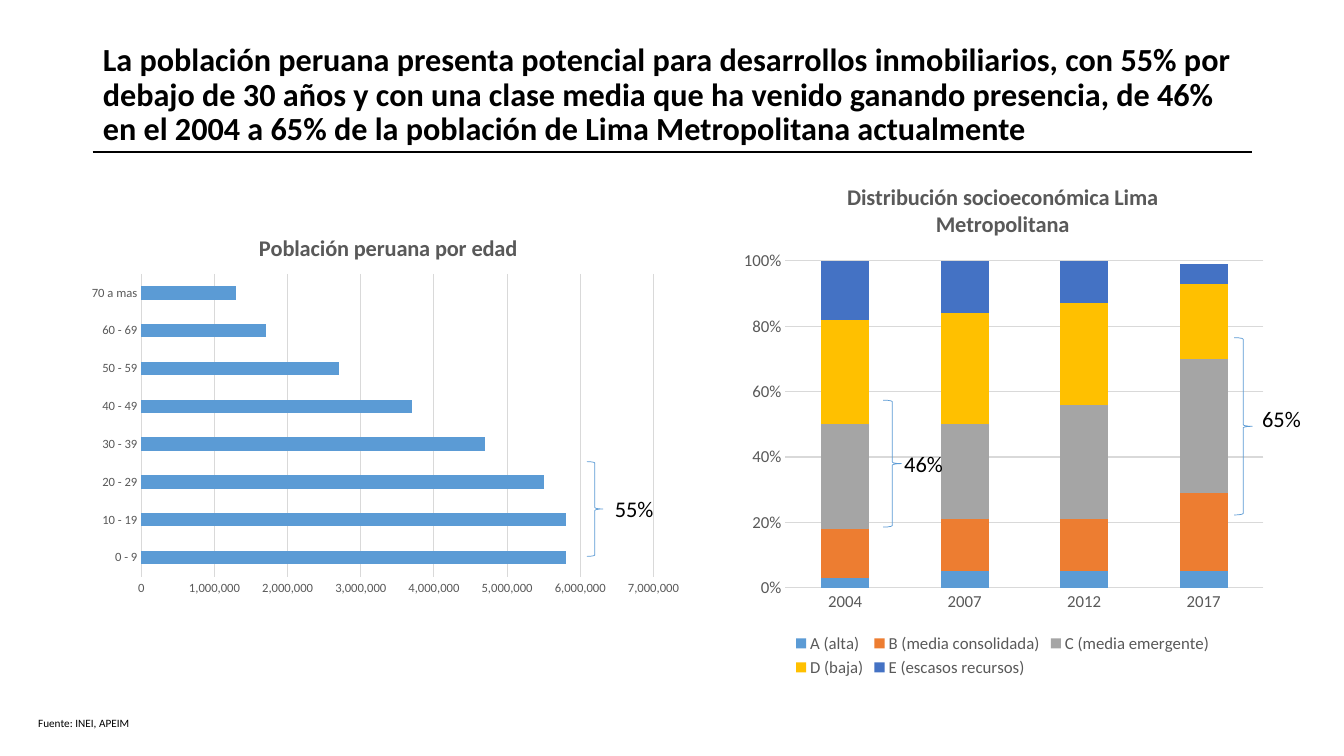
"""Build the slide on Peru's population by age and Lima's socioeconomic mix."""
import pptx
import pptx.chart.data
import pptx.dml.color
import pptx.enum.chart
import pptx.enum.shapes
import pptx.enum.text
import pptx.oxml
import pptx.oxml.ns
import pptx.util

Inches = pptx.util.Inches
Pt = pptx.util.Pt
RGBColor = pptx.dml.color.RGBColor
ChartType = pptx.enum.chart.XL_CHART_TYPE
TickMark = pptx.enum.chart.XL_TICK_MARK

BLACK = RGBColor(0x00, 0x00, 0x00)
GRAY_TEXT = RGBColor(0x59, 0x59, 0x59)
GRID = RGBColor(0xD9, 0xD9, 0xD9)
BLUE = RGBColor(0x5B, 0x9B, 0xD5)
ORANGE = RGBColor(0xED, 0x7D, 0x31)
GRAY = RGBColor(0xA5, 0xA5, 0xA5)
GOLD = RGBColor(0xFF, 0xC0, 0x00)
DARK_BLUE = RGBColor(0x44, 0x72, 0xC4)
FONT = "Calibri"


def style_font(font, size, color, bold=False):
    font.name = FONT
    font.size = Pt(size)
    font.color.rgb = color
    font.bold = bold


def add_label(page, text, left, top, width, height, size):
    box = page.shapes.add_textbox(Inches(left), Inches(top), Inches(width), Inches(height))
    box.text_frame.word_wrap = True
    box.text_frame.auto_size = pptx.enum.text.MSO_AUTO_SIZE.SHAPE_TO_FIT_TEXT
    para = box.text_frame.paragraphs[0]
    para.text = text
    style_font(para.font, size, BLACK)


deck = pptx.Presentation()
deck.slide_width = Inches(13.33)
deck.slide_height = Inches(7.5)
page = deck.slides.add_slide(deck.slide_layouts[5])

title = page.shapes.title
title.left, title.top = Inches(0.92), Inches(0.4)
title.width, title.height = Inches(11.5), Inches(1.1)
title.text_frame.word_wrap = True
title.text_frame.auto_size = pptx.enum.text.MSO_AUTO_SIZE.NONE
title.text_frame.vertical_anchor = pptx.enum.text.MSO_ANCHOR.MIDDLE
para = title.text_frame.paragraphs[0]
para.text = (
    "La población peruana presenta potencial para desarrollos inmobiliarios, con 55% por "
    "debajo de 30 años y con una clase media que ha venido ganando presencia, de 46% "
    "en el 2004 a 65% de la población de Lima Metropolitana actualmente"
)
para.alignment = pptx.enum.text.PP_ALIGN.LEFT
para.line_spacing = 0.9
style_font(para.font, 23, BLACK, True)

rule = page.shapes.add_connector(
    pptx.enum.shapes.MSO_CONNECTOR.STRAIGHT,
    Inches(0.92), Inches(1.51), Inches(12.42), Inches(1.51),
)
rule.line.color.rgb = BLACK
rule.line.width = Pt(1.5)
rule.element.spPr.append(pptx.oxml.parse_xml(f"<a:effectLst {pptx.oxml.ns.nsdecls('a')}/>"))

charts = [
    {
        "title": "Población peruana por edad",
        "type": ChartType.BAR_CLUSTERED,
        "at": (0.79, 2.14, 6.12, 3.85),
        "plot": (0.1, 0.15, 0.83, 0.78),
        "categories": ["0 - 9", "10 - 19", "20 - 29", "30 - 39",
                       "40 - 49", "50 - 59", "60 - 69", "70 a mas"],
        "series": [("Series 1", BLUE, (5800000, 5800000, 5500000, 4700000,
                                       3700000, 2700000, 1700000, 1300000))],
        "size": 9, "gap": 182, "overlap": 0,
        "maximum": 7000000, "step": 1000000, "format": "#,##0", "legend": False,
    },
    {
        "title": "Distribución socioeconómica Lima Metropolitana",
        "type": ChartType.COLUMN_STACKED,
        "at": (7.25, 1.61, 5.39, 5.15),
        "plot": (0.1, 0.19, 0.88, 0.63),
        "categories": ["2004", "2007", "2012", "2017"],
        "series": [
            ("A (alta)", BLUE, (0.03, 0.05, 0.05, 0.05)),
            ("B (media consolidada)", ORANGE, (0.15, 0.16, 0.16, 0.24)),
            ("C (media emergente)", GRAY, (0.32, 0.29, 0.35, 0.41)),
            ("D (baja)", GOLD, (0.32, 0.34, 0.31, 0.23)),
            ("E (escasos recursos)", DARK_BLUE, (0.18, 0.16, 0.13, 0.06)),
        ],
        "size": 12, "gap": 150, "overlap": 100,
        "maximum": 1, "step": 0.2, "format": "0%", "legend": True,
    },
]
for item in charts:
    data = pptx.chart.data.CategoryChartData()
    data.categories = item["categories"]
    for name, color, values in item["series"]:
        data.add_series(name, values)
    frame = page.shapes.add_chart(item["type"], *map(Inches, item["at"]), data)
    chart = frame.chart
    style_font(chart.font, 10, BLACK)
    chart.has_title = True
    heading = chart.chart_title.text_frame.paragraphs[0]
    heading.text = item["title"]
    style_font(heading.font, 16, GRAY_TEXT, True)
    chart.chart_title.include_in_layout = False

    plot = chart.plots[0]
    plot.gap_width = item["gap"]
    plot.overlap = item["overlap"]
    plot.vary_by_categories = False
    for series, (name, color, values) in zip(plot.series, item["series"]):
        series.format.fill.solid()
        series.format.fill.fore_color.rgb = color

    for axis in (chart.category_axis, chart.value_axis):
        axis.major_tick_mark = TickMark.NONE
        axis.minor_tick_mark = TickMark.NONE
        style_font(axis.tick_labels.font, item["size"], GRAY_TEXT)
    chart.category_axis.format.line.color.rgb = GRID
    chart.category_axis.format.line.width = Pt(0.75)
    scale = chart.value_axis
    scale.format.line.fill.background()
    scale.minimum_scale = 0
    scale.maximum_scale = item["maximum"]
    scale.major_unit = item["step"]
    scale.has_major_gridlines = True
    scale.major_gridlines.format.line.color.rgb = GRID
    scale.major_gridlines.format.line.width = Pt(0.75)
    scale.tick_labels.number_format = item["format"]
    scale.tick_labels.number_format_is_linked = False

    chart.has_legend = item["legend"]
    if item["legend"]:
        chart.legend.position = pptx.enum.chart.XL_LEGEND_POSITION.BOTTOM
        chart.legend.include_in_layout = False
        style_font(chart.legend.font, 12, GRAY_TEXT)

    area = chart.element.find(".//" + pptx.oxml.ns.qn("c:plotArea"))
    for layout in area.findall(pptx.oxml.ns.qn("c:layout")):
        area.remove(layout)
    places = "".join(f'<c:{key} val="{value}"/>' for key, value in zip("xywh", item["plot"]))
    area.insert(0, pptx.oxml.parse_xml(
        f"<c:layout {pptx.oxml.ns.nsdecls('c')}><c:manualLayout>"
        '<c:layoutTarget val="inner"/><c:xMode val="edge"/><c:yMode val="edge"/>'
        f"{places}</c:manualLayout></c:layout>"
    ))

braces = [
    ("55%", (5.82, 4.58, 0.16, 0.94), (6, 4.86)),
    ("65%", (12.24, 3.35, 0.18, 1.76), (12.42, 3.97)),
    ("46%", (8.76, 3.97, 0.18, 1.26), (8.87, 4.42)),
]
for share, place, label in braces:
    brace = page.shapes.add_shape(
        pptx.enum.shapes.MSO_SHAPE.RIGHT_BRACE, *map(Inches, place)
    )
    brace.shadow.inherit = False
    brace.fill.background()
    brace.line.color.rgb = BLUE
    brace.line.width = Pt(0.5)
    add_label(page, share, *label, 0.63, 0.37, 16)

add_label(page, "Fuente: INEI, APEIM", 0.28, 7.06, 4.23, 0.24, 8)

deck.save("out.pptx")
